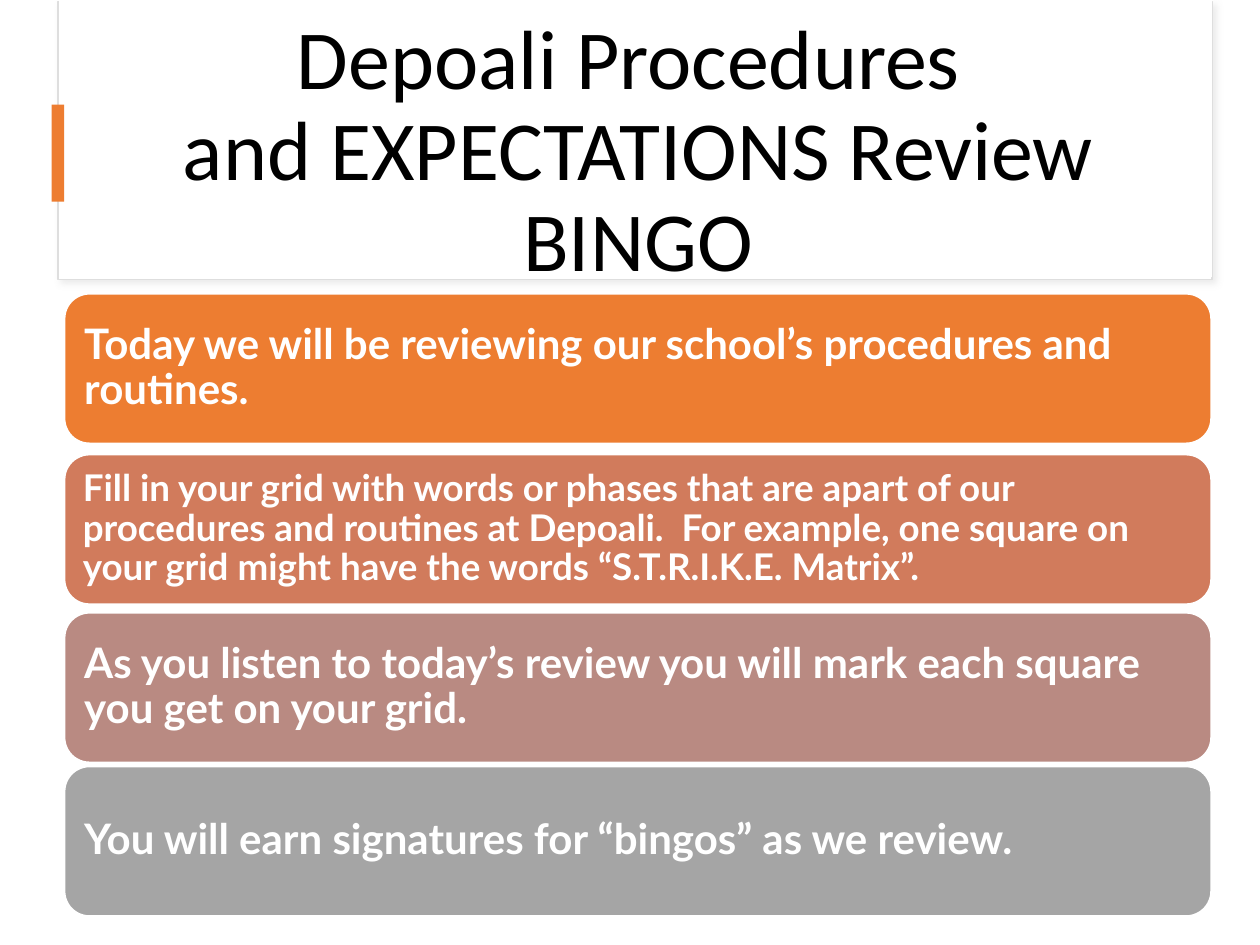
from lxml import etree
from pptx import Presentation
from pptx.dml.color import RGBColor
from pptx.enum import shapes, text
from pptx.oxml import ns
from pptx.util import Pt

COLORS = {
    "white": "FFFFFF", "black": "000000", "border": "DEDEDE", "shadow": "D9D9D9",
    "orange": "ED7D31", "terracotta": "D17B5C", "rose": "B98A82", "gray": "A5A5A5",
}

STEP_LEFT, STEP_WIDTH, STEP_HEIGHT = 36.9, 655.2, 85.5

# top, fill, font size, inset, wording
STEPS = [
    (167.9, "orange", 24, 7.2,
     "Today we will be reviewing our school’s procedures and routines."),
    (259.8, "terracotta", 21, 6.3,
     "Fill in your grid with words or phases that are apart of our procedures and "
     "routines at Depoali.  For example, one square on your grid might have the "
     "words “S.T.R.I.K.E. Matrix”."),
    (350.2, "rose", 24, 7.2,
     "As you listen to today’s review you will mark each square you get on your grid."),
    (438, "gray", 24, 7.2,
     "You will earn signatures for “bingos” as we review."),
]


def rgb(name):
    return RGBColor.from_string(COLORS[name])


def add_box(slide, kind, bounds, fill, line=None, line_width=1):
    box = slide.shapes.add_shape(kind, *map(Pt, bounds))
    box.shadow.inherit = False
    box.fill.solid()
    box.fill.fore_color.rgb = rgb(fill)
    if line:
        box.line.color.rgb = rgb(line)
        box.line.width = Pt(line_width)
    else:
        box.line.fill.background()
    return box


def add_soft_shadow(box):
    """Give the box a half-transparent shadow to the lower right."""
    effects = box._element.spPr.find(ns.qn("a:effectLst"))
    shadow = etree.SubElement(effects, ns.qn("a:outerShdw"), blurRad=str(Pt(4)),
                              dist=str(Pt(3)), dir="2700000", algn="tl", rotWithShape="0")
    color = etree.SubElement(shadow, ns.qn("a:srgbClr"), val=COLORS["shadow"])
    etree.SubElement(color, ns.qn("a:alpha"), val="50000")


def write(box, wording, font_name, size, color, align, bold=False):
    frame = box.text_frame
    frame.word_wrap = True
    frame.vertical_anchor = text.MSO_ANCHOR.MIDDLE
    frame.text = wording
    paragraph = frame.paragraphs[0]
    paragraph.alignment = align
    paragraph.line_spacing = 0.9
    for run in paragraph.runs:
        run.font.name = font_name
        run.font.size = Pt(size)
        run.font.bold = bold
        run.font.color.rgb = rgb(color)
    return frame


def add_header(slide):
    rectangle = shapes.MSO_SHAPE.RECTANGLE
    card = add_box(slide, rectangle, (33.1, 0.7, 659.5, 159.1), "white", "border", 0.75)
    add_soft_shadow(card)
    add_box(slide, rectangle, (33.8, 0, 658.8, 158.4), "white")
    title = slide.shapes.add_textbox(*map(Pt, (52.6, 21.6, 624.2, 131.8)))
    write(title, "Depoali Procedures \vand EXPECTATIONS Review BINGO",
          "Calibri", 48, "black", text.PP_ALIGN.CENTER)
    add_box(slide, rectangle, (29.5, 59.8, 7.2, 55.4), "orange")


def add_step(slide, top, fill, size, inset, wording):
    step = add_box(slide, shapes.MSO_SHAPE.ROUNDED_RECTANGLE,
                   (STEP_LEFT, top, STEP_WIDTH, STEP_HEIGHT), fill, "white")
    frame = write(step, wording, "Lato", size, "white", text.PP_ALIGN.LEFT, bold=True)
    frame.margin_left = frame.margin_right = Pt(inset)
    frame.margin_top = frame.margin_bottom = Pt(inset)


def main():
    deck = Presentation()
    deck.slide_width, deck.slide_height = Pt(720), Pt(540)
    slide = deck.slides.add_slide(deck.slide_layouts[6])
    add_header(slide)
    for step in STEPS:
        add_step(slide, *step)
    deck.save("out.pptx")


if __name__ == "__main__":
    main()
